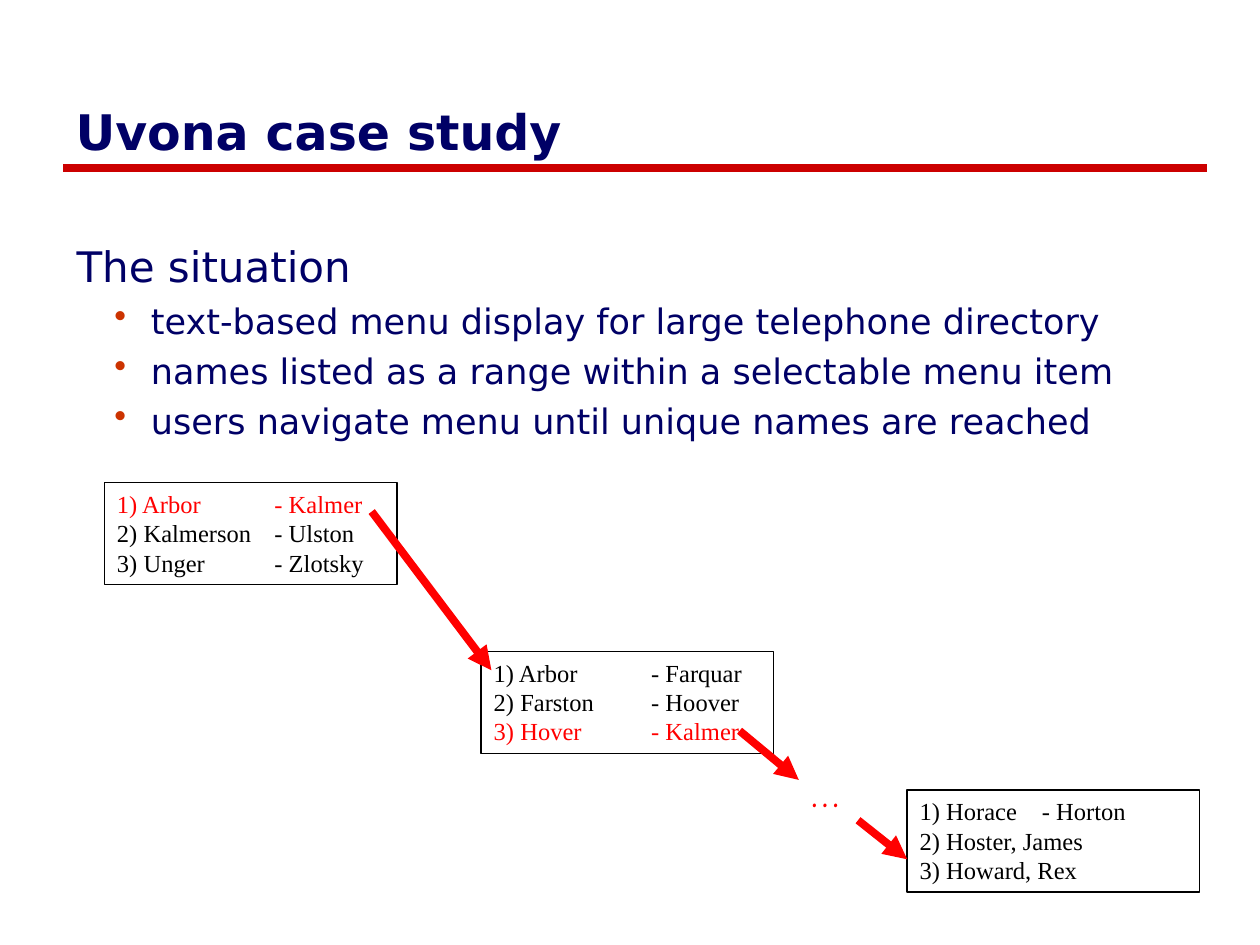
from lxml.etree import SubElement
from pptx import Presentation
from pptx.dml.color import RGBColor
from pptx.enum.shapes import MSO_CONNECTOR as Connector, MSO_SHAPE as Shape
from pptx.enum.text import MSO_ANCHOR as Anchor, PP_ALIGN as Align
from pptx.oxml.ns import qn
from pptx.util import Inches, Pt

NAVY = RGBColor(0x00, 0x00, 0x66)
CRIMSON = RGBColor(0xCC, 0x00, 0x00)
RUST = RGBColor(0xCC, 0x33, 0x00)
RED = RGBColor(0xFF, 0x00, 0x00)
BLACK = RGBColor(0x00, 0x00, 0x00)
SANS, SERIF, COMIC = "DejaVu Sans", "Times New Roman", "Comic Neue"

# Content
TITLE = "Uvona case study"
HEADING = "The situation"
BULLETS = [
    "text-based menu display for large telephone directory",
    "names listed as a range within a selectable menu item",
    "users navigate menu until unique names are reached",
]
# Each menu: left, top, tab stop, chosen row, rows
MENUS = [
    (0.83, 3.83, 1.25, 0, ["1) Arbor\t- Kalmer", "2) Kalmerson\t- Ulston", "3) Unger\t- Zlotsky"]),
    (3.82, 5.17, 1.25, 2, ["1) Arbor\t- Farquar", "2) Farston\t- Hoover", "3) Hover\t- Kalmer"]),
    (7.2, 6.27, 0.97, None, ["1) Horace\t- Horton", "2) Hoster, James", "3) Howard, Rex"]),
]
MENU_SIZE = (2.32, 0.81)
ARROWS = [(2.95, 4.06, 3.9, 5.32), (5.87, 5.8, 6.34, 6.19), (6.81, 6.51, 7.2, 6.82)]


def box(*lengths):
    return [Inches(length) for length in lengths]


def add_run(paragraph, text, font, size, color, bold=False):
    run = paragraph.add_run()
    run.text = text
    run.font.name, run.font.size, run.font.bold = font, Pt(size), bold
    run.font.color.rgb = color


def add_line(slide, ends, color, arrow=False):
    line = slide.shapes.add_connector(Connector.STRAIGHT, *box(*ends))
    line.line.color.rgb, line.line.width = color, Pt(4.5)
    if arrow:
        SubElement(line.line._get_or_add_ln(), qn("a:tailEnd"), type="triangle")
    SubElement(line._element.spPr, qn("a:effectLst"))


def add_bullet(paragraph):
    properties = paragraph._p.get_or_add_pPr()
    properties.set("marL", str(Inches(0.59)))
    properties.set("indent", str(Inches(-0.29)))
    color = SubElement(properties, qn("a:buClr"))
    SubElement(color, qn("a:srgbClr"), val=str(RUST))
    SubElement(properties, qn("a:buChar"), char="•")


def add_menu(slide, left, top, tab, chosen, rows):
    menu = slide.shapes.add_shape(Shape.RECTANGLE, *box(left, top, *MENU_SIZE))
    menu.shadow.inherit = False
    menu.fill.background()
    menu.line.color.rgb, menu.line.width = BLACK, Pt(1)
    frame = menu.text_frame
    frame.vertical_anchor = Anchor.TOP
    for index, row in enumerate(rows):
        paragraph = frame.paragraphs[0] if index == 0 else frame.add_paragraph()
        paragraph.alignment = Align.LEFT
        tabs = SubElement(paragraph._p.get_or_add_pPr(), qn("a:tabLst"))
        SubElement(tabs, qn("a:tab"), pos=str(Inches(tab)), algn="l")
        add_run(paragraph, row, SERIF, 14, RED if index == chosen else BLACK)


def main():
    presentation = Presentation()
    presentation.slide_width, presentation.slide_height = box(10, 7.5)
    slide = presentation.slides.add_slide(presentation.slide_layouts[5])

    # Title and rule
    add_line(slide, (0.5, 1.33, 9.58, 1.33), CRIMSON)
    title = slide.shapes.title
    title.left, title.top, title.width, title.height = box(0.5, 0.75, 9.08, 0.58)
    title.text_frame.vertical_anchor = Anchor.MIDDLE
    paragraph = title.text_frame.paragraphs[0]
    paragraph.alignment = Align.LEFT
    add_run(paragraph, TITLE, SANS, 28, NAVY, bold=True)

    # Situation and its bullets
    body = slide.shapes.add_textbox(*box(0.51, 1.86, 9.06, 5.2)).text_frame
    body.word_wrap = True
    paragraph = body.paragraphs[0]
    paragraph.space_before = Pt(4.8)
    add_run(paragraph, HEADING, SANS, 24, NAVY)
    for bullet in BULLETS:
        paragraph = body.add_paragraph()
        paragraph.space_before = Pt(4.7)
        add_bullet(paragraph)
        add_run(paragraph, bullet, SANS, 20, NAVY)

    # Menus, and the path between them
    for menu in MENUS:
        add_menu(slide, *menu)
    for ends in ARROWS:
        add_line(slide, ends, RED, arrow=True)
    dots = slide.shapes.add_textbox(*box(6.34, 6.03, 0.43, 0.5)).text_frame
    dots.word_wrap = False
    add_run(dots.paragraphs[0], "…", COMIC, 24, RED)

    presentation.save("out.pptx")


if __name__ == "__main__":
    main()
